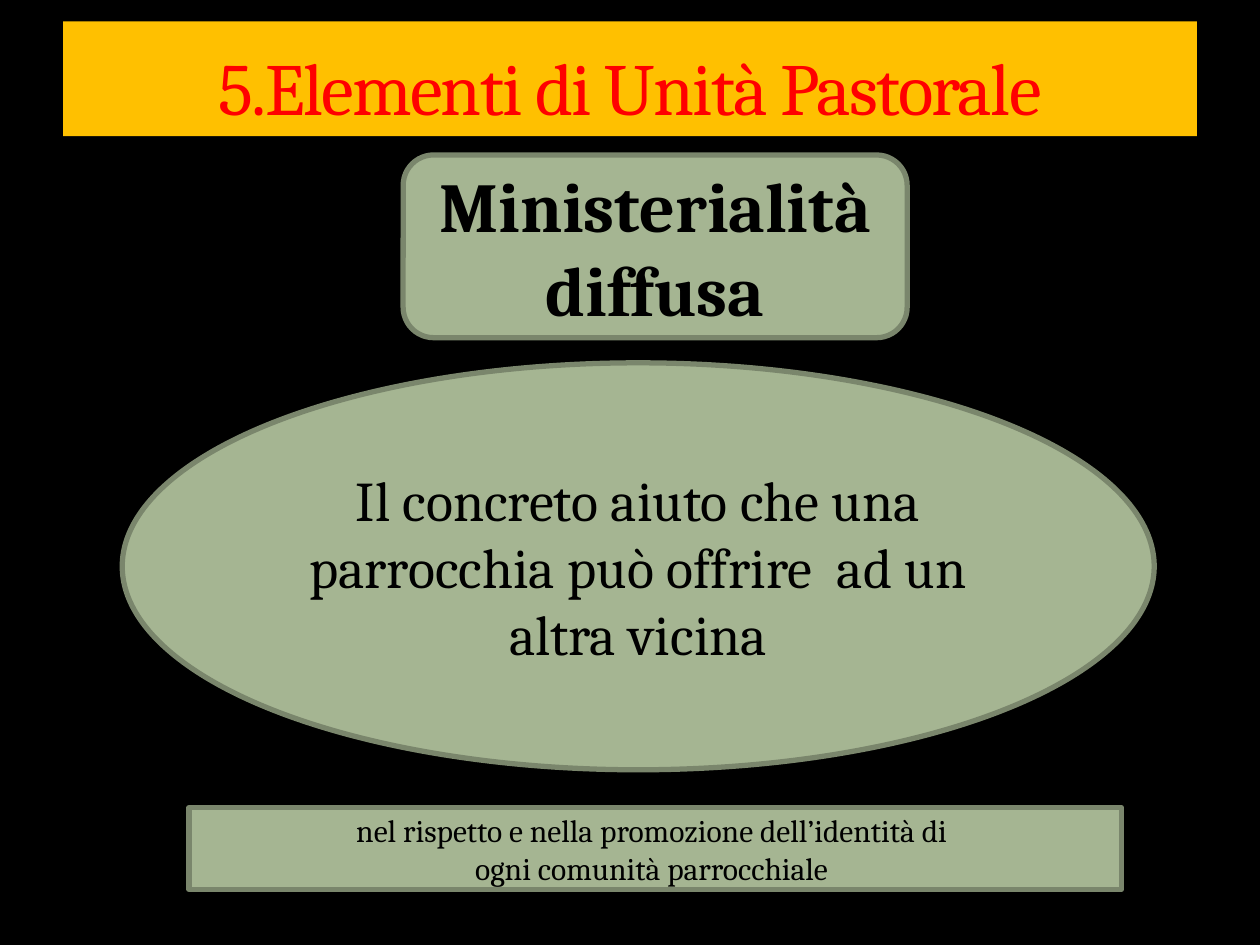
from lxml import etree
from pptx import Presentation
from pptx.dml.color import RGBColor
from pptx.enum import shapes, text
from pptx.oxml import parse_xml
from pptx.oxml.ns import nsdecls
from pptx.util import Inches, Pt

BLACK = RGBColor(0x00, 0x00, 0x00)
GOLD = RGBColor(0xFF, 0xC0, 0x00)
RED = RGBColor(0xFF, 0x00, 0x00)
SAGE = RGBColor(0xA5, 0xB5, 0x92)
DARK_SAGE = RGBColor(0x7A, 0x86, 0x6C)
FONT = "Cambria"


def fill_solid(item, color):
    item.fill.solid()
    item.fill.fore_color.rgb = color


def write_text(frame, lines, anchor, color, **font_format):
    frame.word_wrap = True
    frame.auto_size = text.MSO_AUTO_SIZE.NONE
    frame.vertical_anchor = anchor
    for index, line in enumerate(lines):
        paragraph = frame.paragraphs[0] if index == 0 else frame.add_paragraph()
        paragraph.alignment = text.PP_ALIGN.CENTER
        run = paragraph.add_run()
        run.text = line
        for name, value in {"name": FONT, **font_format}.items():
            setattr(run.font, name, value)
        run.font.color.rgb = color


def outline_title(run):
    """Tighten the letters and give them a faint hairline outline."""
    properties = run.font._element
    properties.set("spc", "-100")
    properties.insert(0, parse_xml(
        f'<a:ln {nsdecls("a")} w="3175"><a:solidFill><a:srgbClr val="3C4422">'
        '<a:alpha val="25000"/></a:srgbClr></a:solidFill></a:ln>'))


def add_title(slide, title_text):
    title = slide.shapes.title
    box = {"left": 0.5, "top": 0.17, "width": 9, "height": 0.91}
    for name, value in box.items():
        setattr(title, name, Inches(value))
    fill_solid(title, GOLD)
    write_text(title.text_frame, [title_text], text.MSO_ANCHOR.BOTTOM, RED,
               size=Pt(42))
    outline_title(title.text_frame.paragraphs[0].runs[0])


def add_panel(slide, kind, box, lines, size, bold=False):
    panel = slide.shapes.add_shape(kind, *map(Inches, box))
    panel.shadow.inherit = False
    fill_solid(panel, SAGE)
    panel.line.color.rgb = DARK_SAGE
    panel.line.width = Pt(3)
    write_text(panel.text_frame, lines, text.MSO_ANCHOR.MIDDLE, BLACK,
               size=Pt(size), bold=bold)


def main():
    presentation = Presentation()
    presentation.slide_width = Inches(10)
    presentation.slide_height = Inches(7.5)
    slide = presentation.slides.add_slide(presentation.slide_layouts[5])
    fill_solid(slide.background, BLACK)

    add_title(slide, "5.Elementi di Unità Pastorale")

    # Theme
    kind = shapes.MSO_SHAPE
    add_panel(slide, kind.FLOWCHART_ALTERNATE_PROCESS, (3.2, 1.23, 4, 1.45),
              ["Ministerialità diffusa"], 40, bold=True)
    # Explanation
    add_panel(slide, kind.OVAL, (0.97, 2.88, 8.19, 3.23),
              ["Il concreto aiuto che una parrocchia può offrire  ad un altra vicina"],
              32)
    # Condition
    add_panel(slide, kind.RECTANGLE, (1.5, 6.41, 7.4, 0.65),
              ["nel rispetto e nella promozione dell’identità di ",
               "ogni comunità parrocchiale "], 18)

    presentation.save("out.pptx")


if __name__ == "__main__":
    main()
